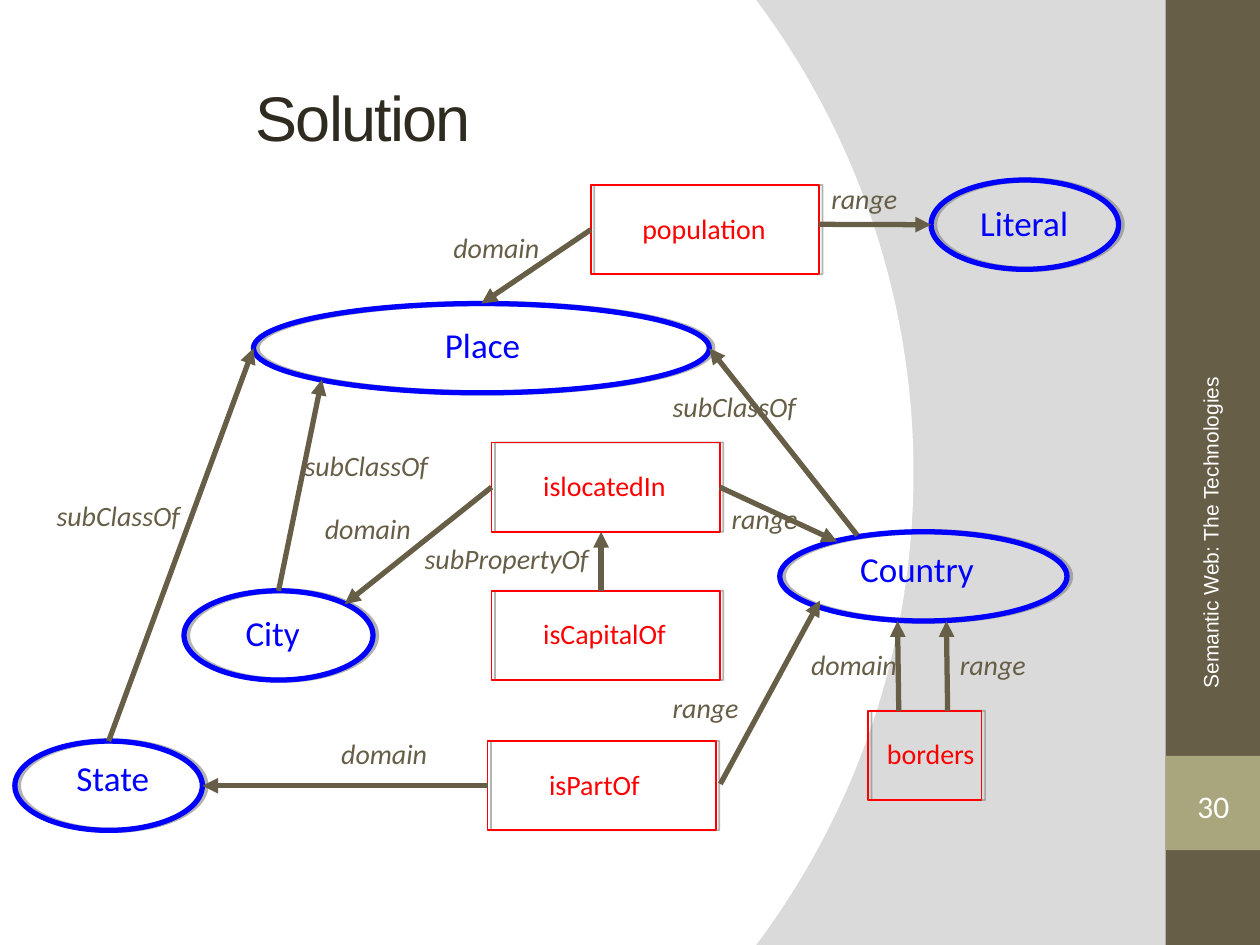
from lxml import etree
from pptx import Presentation
from pptx.dml.color import RGBColor
from pptx.enum.shapes import MSO_CONNECTOR, MSO_SHAPE
from pptx.enum.text import MSO_ANCHOR, PP_ALIGN
from pptx.oxml import parse_xml
from pptx.oxml.ns import qn
from pptx.util import Cm, Pt

ELLIPSE, RECTANGLE = MSO_SHAPE.OVAL, MSO_SHAPE.RECTANGLE
STRAIGHT = MSO_CONNECTOR.STRAIGHT
TOP, MIDDLE = MSO_ANCHOR.TOP, MSO_ANCHOR.MIDDLE
LEFT, CENTER = PP_ALIGN.LEFT, PP_ALIGN.CENTER

BROWN, OLIVE, WHITE = "675E47", "A9A57C", "FFFFFF"
NODE_HEIGHT = 1.8
LABEL_INSET = 0.25

CLASS_STYLE = {"shape": ELLIPSE, "color": "0000FF", "line": 3, "size": 20, "label_height": 1.12}
PROPERTY_STYLE = {"shape": RECTANGLE, "color": "FF0000", "line": 1, "size": 16, "label_height": 0.94}

# name: (left, top, width), (label offset x, label offset y, label width)
CLASSES = {
    "State": ((0.3, 14.94, 3.78), (0.99, 0.18, 3.4)),
    "City": ((3.71, 11.91, 3.81), (0.99, 0.3, 1.8)),
    "Country": ((15.72, 10.72, 5.79), (1.37, 0.2, 4.8)),
    "Literal": ((18.77, 3.63, 3.78), (0.74, 0.3, 3.4)),
    "Place": ((5.11, 6.12, 9.19), (3.61, 0.28, 2.59)),
}
PROPERTIES = {
    "isCapitalOf": ((9.91, 11.91, 4.6), (0.79, 0.4, 3.18)),
    "islocatedIn": ((9.91, 8.92, 4.6), (0.79, 0.4, 3.4)),
    "borders": ((17.5, 14.33, 2.29), (0.13, 0.4, 2.79)),
    "isPartOf": ((9.83, 14.94, 4.6), (0.99, 0.4, 3.68)),
    "population": ((11.91, 3.73, 4.6), (0.79, 0.4, 4.19)),
}
# source, point on it, target, point on it (as shares of the node), label, label place
RELATIONS = [
    ("islocatedIn", (0, 0.5), "City", (0.85, 0.15), "domain", (6.3, 10.19)),
    ("islocatedIn", (1, 0.5), "Country", (0.2, 0.11), "range", (14.5, 9.98)),
    ("borders", (0.27, 0), "Country", (0.41, 1), "domain", (16.1, 12.93)),
    ("borders", (0.7, 0), "Country", (0.58, 1), "range", (19.1, 12.93)),
    ("isPartOf", (0, 0.5), "State", (1, 0.5), "domain", (6.63, 14.73)),
    ("isPartOf", (1.02, 0.48), "Country", (0.14, 0.77), "range", (13.31, 13.79)),
    ("population", (1, 0.44), "Literal", (0, 0.5), "range", (16.51, 3.53)),
    ("population", (0, 0.5), "Place", (0.5, 0), "domain", (8.89, 4.52)),
    ("isCapitalOf", (0.48, 0), "islocatedIn", (0.48, 1), "subPropertyOf", (8.31, 10.8)),
    ("State", (0.5, 0), "Place", (0, 0.5), "subClassOf", (0.89, 9.93)),
    ("City", (0.5, 0), "Place", (0.15, 0.85), "subClassOf", (5.89, 8.92)),
    ("Country", (0.27, 0.04), "Place", (1, 0.5), "subClassOf", (13.31, 7.72)),
]


def rgb(color):
    return RGBColor.from_string(color)


def write(shape, text, color, anchor=TOP, alignment=LEFT, **font_values):
    frame = shape.text_frame
    frame.word_wrap = True
    frame.vertical_anchor = anchor
    paragraph = frame.paragraphs[0]
    paragraph.alignment = alignment
    run = paragraph.add_run()
    run.text = text
    run.font.color.rgb = rgb(color)
    for name, value in font_values.items():
        setattr(run.font, name, value)
    return run


def add_text(slide, box, text, color, **format_values):
    shape = slide.shapes.add_textbox(*map(Cm, box))
    write(shape, text, color, **format_values)
    return shape


def set_background(slide):
    """White disc on grey, made by a circular gradient with a hard edge."""
    slide.background.fill.solid()
    properties = slide.background._cSld.bg.bgPr
    gradient = parse_xml(
        '<a:gradFill xmlns:a="http://schemas.openxmlformats.org/drawingml/2006/main" rotWithShape="1">'
        '<a:gsLst><a:gs pos="100000"><a:srgbClr val="FFFFFF"/></a:gs>'
        '<a:gs pos="100000"><a:srgbClr val="DADADA"/></a:gs></a:gsLst>'
        '<a:path path="circle"><a:fillToRect l="20000" t="50000" r="100000" b="50000"/></a:path>'
        '</a:gradFill>')
    properties.replace(properties.find(qn("a:solidFill")), gradient)


def add_sidebar(slide, left, top, width, height):
    number_top = top + 15.24
    for band_top, band_height, color in ((top, height, BROWN), (number_top, width, OLIVE)):
        band = slide.shapes.add_shape(RECTANGLE, *map(Cm, (left, band_top, width, band_height)))
        band.shadow.inherit = False
        band.fill.solid()
        band.fill.fore_color.rgb = rgb(color)
        band.line.fill.background()
    number = add_text(slide, (left + 0.2, number_top + 0.46, 1.52, 1.09), "30", WHITE,
                      anchor=MIDDLE, alignment=CENTER, name="Calibri", size=Pt(18))
    for side in ("left", "top", "right", "bottom"):
        setattr(number.text_frame, f"margin_{side}", 0)
    footer = add_text(slide, (left - 6.1, top + 6.43, 14, 1.4), "Semantic Web: The Technologies",
                      WHITE, anchor=MIDDLE, name="Arial", size=Pt(12))
    footer.rotation = 270


def format_title(title, left, top, width, height):
    box = {"left": left, "top": top, "width": width, "height": height}
    for name, value in box.items():
        setattr(title, name, Cm(value))
    run = write(title, "Solution", "2F2B20", anchor=MIDDLE, name="Arial", size=Pt(36))
    run.font._element.set("spc", "-100")


def add_side_shadow(shape):
    shape.shadow.inherit = False
    effects = shape._element.spPr.find(qn("a:effectLst"))
    shadow = etree.SubElement(effects, qn("a:outerShdw"), blurRad="0", dist=str(Pt(2)),
                              dir="0", algn="ctr", rotWithShape="0")
    color = etree.SubElement(shadow, qn("a:srgbClr"), val="808080")
    etree.SubElement(color, qn("a:alpha"), val="60000")


def add_node(slide, name, box, label, style):
    left, top, width = box
    offset_x, offset_y, label_width = label
    shape = slide.shapes.add_shape(style["shape"], *map(Cm, (left, top, width, NODE_HEIGHT)))
    shape.fill.background()
    shape.line.color.rgb = rgb(style["color"])
    shape.line.width = Pt(style["line"])
    add_side_shadow(shape)
    add_text(slide, (left + offset_x, top + offset_y, label_width, style["label_height"]),
             name, style["color"], name="Calibri", size=Pt(style["size"]))


def point_on(box, share):
    left, top, width = box
    return Cm(left + share[0] * width), Cm(top + share[1] * NODE_HEIGHT)


def add_arrow(slide, start, end):
    arrow = slide.shapes.add_connector(STRAIGHT, *start, *end)
    arrow.line.color.rgb = rgb(BROWN)
    arrow.line.width = Pt(3)
    etree.SubElement(arrow.line._get_or_add_ln(), qn("a:tailEnd"), type="triangle")
    etree.SubElement(arrow._element.spPr, qn("a:effectLst"))


def add_ontology(slide):
    """Classes as ellipses, properties as rectangles, joined by labelled arrows."""
    boxes = {}
    for nodes, style in ((CLASSES, CLASS_STYLE), (PROPERTIES, PROPERTY_STYLE)):
        for name, (box, label) in nodes.items():
            add_node(slide, name, box, label, style)
            boxes[name] = box
    for source, source_share, target, target_share, label, place in RELATIONS:
        add_arrow(slide, point_on(boxes[source], source_share),
                  point_on(boxes[target], target_share))
        width = 4.19 if label.startswith("sub") else 2.39
        add_text(slide, (*place, width, 0.94), label, BROWN,
                 name="Calibri", size=Pt(16), italic=True)


def main():
    presentation = Presentation()
    presentation.slide_width, presentation.slide_height = Cm(25.4), Cm(19.05)
    slide = presentation.slides.add_slide(presentation.slide_layouts[5])
    set_background(slide)
    add_sidebar(slide, 23.5, 0, 1.9, 19.05)
    format_title(slide.shapes.title, 4.9, 0.76, 16.13, 3.18)
    add_ontology(slide)
    presentation.save("out.pptx")


if __name__ == "__main__":
    main()
